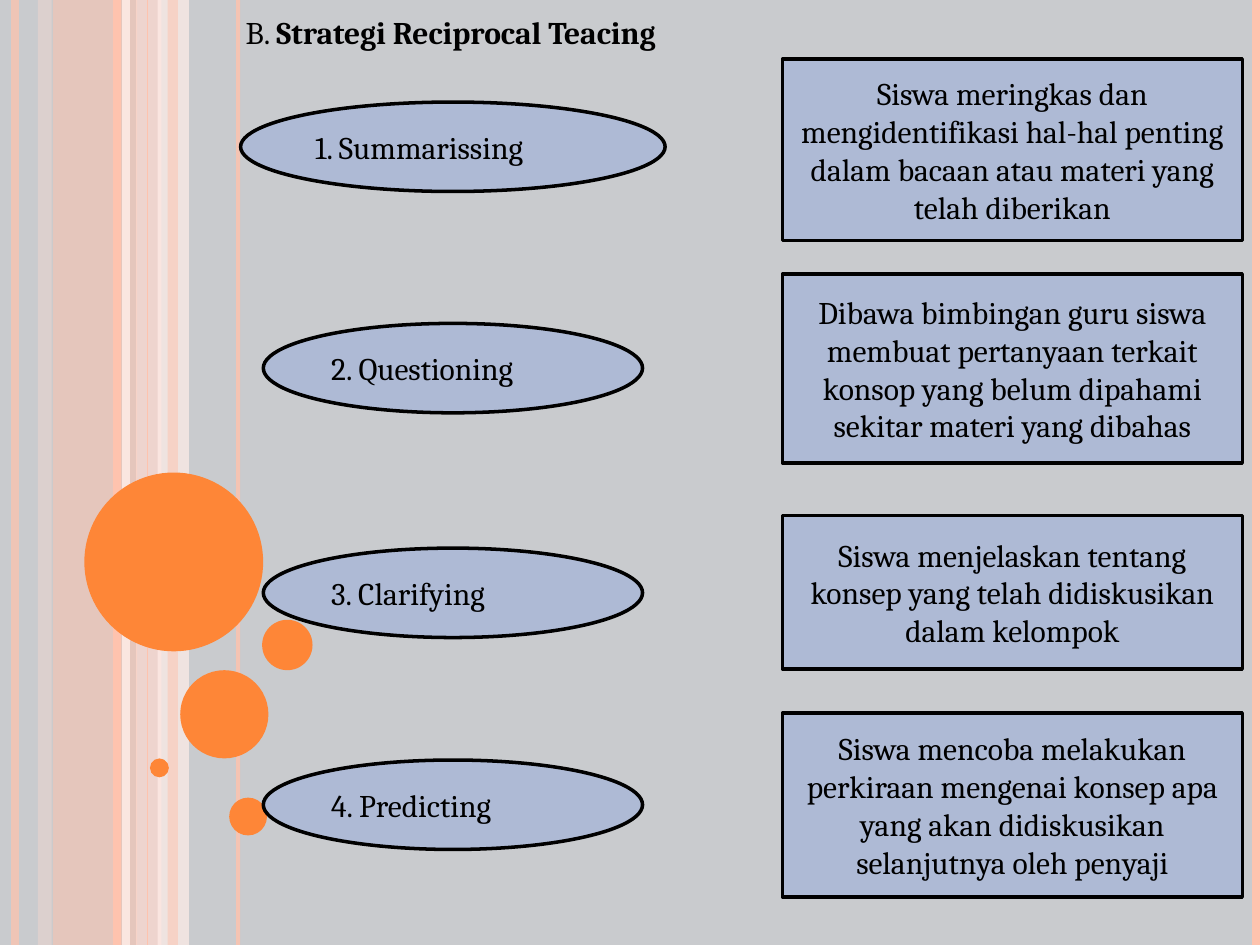
"""Build the slide on the four strategies of reciprocal teaching."""
from lxml import etree
from pptx import Presentation
from pptx.dml.color import RGBColor
from pptx.enum.shapes import MSO_CONNECTOR, MSO_SHAPE
from pptx.enum.text import MSO_ANCHOR, MSO_AUTO_SIZE, PP_ALIGN
from pptx.oxml.ns import qn
from pptx.util import Pt

HEADING = ("B. ", "Strategi Reciprocal Teacing")
STRATEGIES = [
    {"name": "1. Summarissing", "name_top": 58.3, "name_width": 242.6, "top": 33.8, "height": 103.7,
     "detail": "Siswa meringkas dan mengidentifikasi hal-hal penting dalam bacaan atau materi yang telah diberikan"},
    {"name": "2. Questioning", "name_top": 184.8, "name_width": 216.7, "top": 156.7, "height": 108,
     "detail": "Dibawa bimbingan guru siswa membuat pertanyaan terkait konsop yang belum dipahami sekitar materi yang dibahas"},
    {"name": "3. Clarifying", "name_top": 313.2, "name_width": 216.7, "top": 294.6, "height": 87.8,
     "detail": "Siswa menjelaskan tentang konsep yang telah didiskusikan dalam kelompok"},
    {"name": "4. Predicting", "name_top": 434.3, "name_width": 216.7, "top": 407.5, "height": 105,
     "detail": "Siswa mencoba melakukan perkiraan mengenai konsep apa yang akan didiskusikan selanjutnya oleh penyaji"},
]

THEME = {
    "background": "C9CBCE", "panel": "AEBAD5", "ink": "000000", "bubble": "FE8637",
    "peach": "FEC3AE", "blush": "FFD9CE", "pale": "FFEDE8",
    "font": "Cambria", "size": 18, "outline": 2,
}
WIDTH, HEIGHT = 720, 540
NAME_CENTRE, NAME_HEIGHT = 258.8, 51.1
DETAIL_LEFT, DETAIL_WIDTH = 447.1, 262.8

BANDS = [(30.2, 48.2, "peach", 54), (21.6, 7.9, "blush", 36),
         (77.8, 14.4, "blush", 70), (90, 18, "pale", 71)]
RULES = [(8.6, 4.5, "peach", 73), (72, 4.5, "pale", 83), (67, 4.5, "peach", 100),
         (136.1, 2.25, "peach", 82), (84.2, 0.75, "peach", 100), (717.8, 4.5, "peach", 100)]
FRONT_BAND = (95.8, 5.8, "peach", 51)
BUBBLES = [(48.2, 270, 102.2), (103, 383, 50.4), (85.7, 433.4, 10.8),
           (131, 455.8, 21.6), (149.8, 354.2, 28.8)]


def paint(fill, colour, opacity=100):
    fill.solid()
    fill.fore_color.rgb = RGBColor.from_string(THEME[colour])
    if opacity < 100:
        for tint in fill._xPr.iter(qn("a:srgbClr")):
            etree.SubElement(tint, qn("a:alpha"), val=str(opacity * 1000))


def add_figure(slide, kind, left, top, width, height, colour, opacity=100):
    figure = slide.shapes.add_shape(kind, Pt(left), Pt(top), Pt(width), Pt(height))
    figure.shadow.inherit = False
    paint(figure.fill, colour, opacity)
    figure.line.fill.background()
    return figure


def add_band(slide, left, width, colour, opacity):
    add_figure(slide, MSO_SHAPE.RECTANGLE, left, 0, width, HEIGHT, colour, opacity)


def add_rule(slide, x, weight, colour, opacity):
    rule = slide.shapes.add_connector(MSO_CONNECTOR.STRAIGHT, Pt(x), Pt(0), Pt(x), Pt(HEIGHT))
    rule.line.width = Pt(weight)
    paint(rule.line.fill, colour, opacity)
    etree.SubElement(rule._element.spPr, qn("a:effectLst"))


def format_text(frame, align):
    frame.word_wrap = True
    for paragraph in frame.paragraphs:
        paragraph.alignment = align
        for run in paragraph.runs:
            run.font.name = THEME["font"]
            run.font.size = Pt(THEME["size"])
            run.font.color.rgb = RGBColor.from_string(THEME["ink"])


def add_panel(slide, kind, left, top, width, height, text, align):
    panel = add_figure(slide, kind, left, top, width, height, "panel")
    paint(panel.line.fill, "ink")
    panel.line.width = Pt(THEME["outline"])
    panel.text_frame.text = text
    panel.text_frame.vertical_anchor = MSO_ANCHOR.MIDDLE
    format_text(panel.text_frame, align)


def add_heading(slide):
    heading = slide.shapes.title
    heading.left, heading.top, heading.width, heading.height = Pt(133.2), Pt(3.6), Pt(574.6), Pt(51.1)
    frame = heading.text_frame
    frame.auto_size = MSO_AUTO_SIZE.NONE
    frame.vertical_anchor = MSO_ANCHOR.TOP
    for part in HEADING:
        frame.paragraphs[0].add_run().text = part
    format_text(frame, PP_ALIGN.JUSTIFY)
    frame.paragraphs[0].runs[1].font.bold = True
    heading._element.getparent().append(heading._element)


def main():
    deck = Presentation()
    deck.slide_width, deck.slide_height = Pt(WIDTH), Pt(HEIGHT)
    slide = deck.slides.add_slide(deck.slide_layouts[5])
    paint(slide.background.fill, "background")

    for band in BANDS:
        add_band(slide, *band)
    for rule in RULES:
        add_rule(slide, *rule)
    add_band(slide, *FRONT_BAND)
    for left, top, diameter in BUBBLES:
        add_figure(slide, MSO_SHAPE.OVAL, left, top, diameter, diameter, "bubble")

    add_heading(slide)
    for strategy in STRATEGIES:
        name_width = strategy["name_width"]
        add_panel(slide, MSO_SHAPE.OVAL, NAME_CENTRE - name_width / 2, strategy["name_top"],
                  name_width, NAME_HEIGHT, strategy["name"], PP_ALIGN.JUSTIFY)
        add_panel(slide, MSO_SHAPE.RECTANGLE, DETAIL_LEFT, strategy["top"],
                  DETAIL_WIDTH, strategy["height"], strategy["detail"], PP_ALIGN.CENTER)
    deck.save("out.pptx")


if __name__ == "__main__":
    main()
